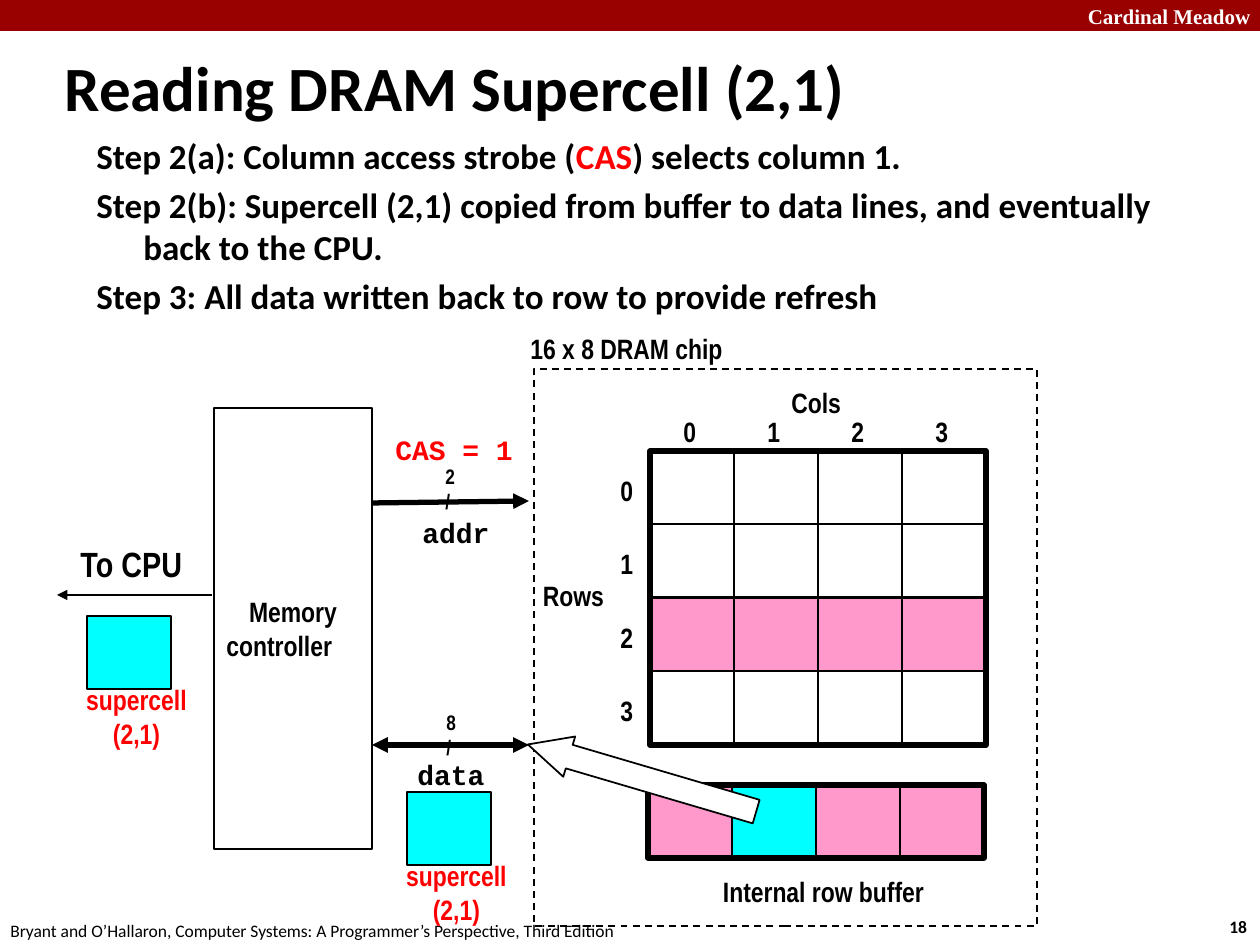
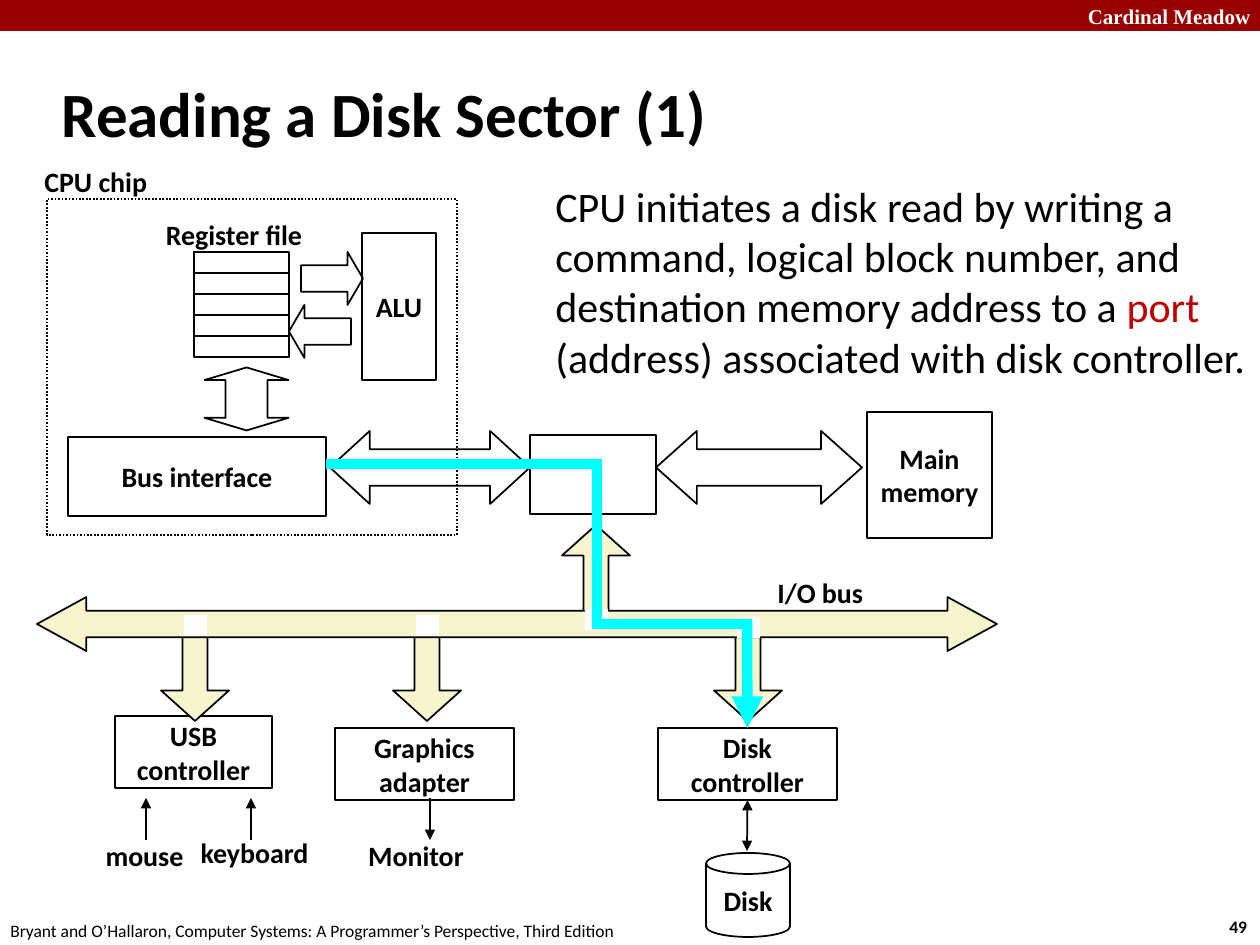
import pptx
import pptx.dml.color
import pptx.enum.dml
import pptx.enum.shapes
import pptx.enum.text
import pptx.oxml.ns
import pptx.util
import lxml.etree

RGB = pptx.dml.color.RGBColor
SHAPE = pptx.enum.shapes.MSO_SHAPE
DASH = pptx.enum.dml.MSO_LINE
ALIGN = pptx.enum.text.PP_ALIGN
ANCHOR = pptx.enum.text.MSO_ANCHOR

BLACK = RGB(0x00, 0x00, 0x00)
WHITE = RGB(0xFF, 0xFF, 0xFF)
BAND_RED = RGB(0x99, 0x00, 0x00)
RED = RGB(0xFF, 0x00, 0x00)
DARK_RED = RGB(0xC0, 0x00, 0x00)
PINK = RGB(0xFF, 0x99, 0xCC)
CYAN = RGB(0x00, 0xFF, 0xFF)
CREAM = RGB(0xF7, 0xF5, 0xCD)

PX_PER_INCH = 126


def font_format(name, size, bold=True):
    return {"name": name, "size": pptx.util.Pt(size), "bold": bold}


TITLE_FONT = font_format("Calibri", 36)
BODY_FONT = font_format("Calibri", 20)
DESCRIPTION_FONT = font_format("Calibri", 24, False)
DIAGRAM_FONT = font_format("Calibri", 16)
FOOTER_FONT = font_format("Calibri", 10, False)
NUMBER_FONT = font_format("Calibri", 10)
BAND_FONT = font_format("Times New Roman", 12)
NARROW_FONT = font_format("Arial Narrow", 16)
BUS_WIDTH_FONT = font_format("Arial Narrow", 12)
TO_CPU_FONT = font_format("Arial Narrow", 20)
CODE_FONT = font_format("Courier New", 16)

# Shared by both slides
SCHOOL = "Cardinal Meadow"
FOOTER = "Bryant and O’Hallaron, Computer Systems: A Programmer’s Perspective, Third Edition"

# DRAM slide
STEPS = [
    [("Step 2(a): Column access strobe (", BLACK), ("CAS", RED), (") selects column 1.", BLACK)],
    [("Step 2(b): Supercell (2,1) copied from buffer to data lines, and eventually back to the CPU.", BLACK)],
    [("Step 3: All data written back to row to provide refresh", BLACK)],
]
GRID_SIZE = 4
SELECTED_ROW, SELECTED_COLUMN = 2, 1
CELL_WIDTH, CELL_HEIGHT = 84, 73
GRID = (650, 451, 336, 294)
ROW_BUFFER = (648, 785, 336, 73)
DRAM_CHIP = (534, 369, 503, 557)
MEMORY_CONTROLLER = (214, 408, 158, 441)
COPY_ARROW = (621, 659, 42, 238)
SUPERCELLS = [(407, 792), (87, 616)]
DRAM_LABELS = [
    # text, box, font, colour, alignment
    ("Cols", (779, 379, 76, 47), NARROW_FONT, BLACK, ALIGN.LEFT),
    ("Rows", (530, 572, 87, 47), NARROW_FONT, BLACK, ALIGN.CENTER),
    ("Internal row buffer", (709, 868, 229, 47), NARROW_FONT, BLACK, ALIGN.CENTER),
    ("16 x 8 DRAM chip", (518, 325, 261, 47), NARROW_FONT, BLACK, ALIGN.LEFT),
    ("CAS = 1", (383, 426, 144, 47), CODE_FONT, RED, ALIGN.LEFT),
    ("addr", (410, 509, 93, 47), CODE_FONT, BLACK, ALIGN.LEFT),
    ("data", (405, 751, 93, 47), CODE_FONT, BLACK, ALIGN.LEFT),
    ("2\n/", (433, 457, 37, 63), BUS_WIDTH_FONT, BLACK, ALIGN.LEFT),
    ("8\n/", (434, 703, 37, 63), BUS_WIDTH_FONT, BLACK, ALIGN.LEFT),
    ("To CPU", (68, 536, 127, 55), TO_CPU_FONT, BLACK, ALIGN.LEFT),
]
DRAM_LINES = [
    # start, end, width, arrowheads
    ((372, 503), (529, 501), 3, ["tailEnd"]),
    ((372, 745), (529, 745), 3, ["headEnd", "tailEnd"]),
    ((212, 595), (57, 595), 1.5, ["tailEnd"]),
]

# Disk slide
DESCRIPTION = [[
    ("CPU initiates a disk read by writing a command, logical block number, "
     "and destination memory address to a ", BLACK),
    ("port ", DARK_RED),
    ("(address) associated with disk controller.", BLACK),
]]
REGISTERS = 5
REGISTER_FILE = (194, 252, 95, 21)
CPU_CHIP = (47, 199, 410, 336)
DISK_CONTROLLER = "Disk\ncontroller"
DISK_BOXES = [
    # text, box
    ("Main\nmemory", (867, 412, 125, 126)),
    ("", (530, 435, 126, 79)),
    ("ALU", (362, 233, 74, 147)),
    ("Bus interface", (68, 437, 258, 79)),
    ("USB\ncontroller", (115, 716, 157, 72)),
    ("Graphics\nadapter", (335, 728, 179, 72)),
    (DISK_CONTROLLER, (658, 728, 179, 72)),
]
IO_ARROW_ADJUSTMENTS = (0.367, 0.449)
BLOCK_ARROWS = [
    # preset, box, adjustments, fill, rotation
    (SHAPE.LEFT_RIGHT_ARROW, (656, 431, 206, 73), (0.5, 0.56), None, 0),
    (SHAPE.LEFT_RIGHT_ARROW, (330, 431, 200, 73), (0.5, 0.545), None, 0),
    (SHAPE.RIGHT_ARROW, (301, 252, 62, 53), (0.5, 0.292), None, 0),
    (SHAPE.LEFT_ARROW, (289, 305, 62, 53), (0.5, 0.292), None, 0),
    (SHAPE.LEFT_RIGHT_ARROW, (215, 357, 63, 84), (0.5, 0.2), None, 90),
    (SHAPE.UP_ARROW, (562, 525, 68, 95), IO_ARROW_ADJUSTMENTS, CREAM, 0),
    (SHAPE.DOWN_ARROW, (714, 626, 68, 95), IO_ARROW_ADJUSTMENTS, CREAM, 0),
    (SHAPE.DOWN_ARROW, (393, 626, 68, 95), IO_ARROW_ADJUSTMENTS, CREAM, 0),
    (SHAPE.DOWN_ARROW, (161, 626, 68, 95), IO_ARROW_ADJUSTMENTS, CREAM, 0),
    (SHAPE.LEFT_RIGHT_ARROW, (37, 597, 960, 54), (0.486, 0.915), CREAM, 0),
]
BUS_JOINTS = [(184, 615), (416, 615), (737, 617), (585, 609)]
DISK_LABELS = [
    ("CPU chip", (32, 158, 130, 47), ALIGN.LEFT),
    ("Register file", (152, 211, 164, 47), ALIGN.CENTER),
    ("I/O bus", (765, 569, 112, 47), ALIGN.LEFT),
    ("mouse", (92, 832, 105, 47), ALIGN.CENTER),
    ("keyboard", (187, 829, 135, 47), ALIGN.CENTER),
    ("Monitor", (355, 832, 122, 47), ALIGN.CENTER),
]
DEVICE_LINES = [
    ((146, 798), (146, 840), ["headEnd"]),
    ((251, 798), (251, 840), ["headEnd"]),
    ((430, 798), (430, 840), ["tailEnd"]),
]
READ_ROUTE = [
    ((326, 464), (602, 464)),
    ((597, 464), (597, 620)),
    ((592, 624), (747, 624)),
]


def px(length):
    return pptx.util.Emu(round(length * pptx.util.Inches(1) / PX_PER_INCH))


def set_attributes(target, values):
    for name, value in values.items():
        setattr(target, name, value)


def write_runs(frame, paragraphs, font, alignment=ALIGN.LEFT):
    """Fill a text frame from paragraphs, each a list of (text, colour)."""
    for index, runs in enumerate(paragraphs):
        paragraph = frame.paragraphs[0] if index == 0 else frame.add_paragraph()
        paragraph.alignment = alignment
        for text, color in runs:
            run = paragraph.add_run()
            run.text = text
            set_attributes(run.font, font)
            run.font.color.rgb = color


def plain(text, color=BLACK):
    return [[(line, color)] for line in text.split("\n")]


def add_text(slide, box, paragraphs, font, alignment=ALIGN.LEFT, wrap=False, anchor=ANCHOR.MIDDLE):
    frame = slide.shapes.add_textbox(*map(px, box)).text_frame
    set_attributes(frame, {"word_wrap": wrap, "vertical_anchor": anchor})
    write_runs(frame, paragraphs, font, alignment)
    return frame


def add_block(slide, box, fill=None, preset=SHAPE.RECTANGLE, line=1, dash=None, adjustments=(),
              rotation=0, text="", font=DIAGRAM_FONT):
    shape = slide.shapes.add_shape(preset, *map(px, box))
    shape.shadow.inherit = False
    shape.rotation = rotation
    if fill is None:
        shape.fill.background()
    else:
        shape.fill.solid()
        shape.fill.fore_color.rgb = fill
    if line:
        shape.line.color.rgb = BLACK
        shape.line.width = pptx.util.Pt(line)
        shape.line.dash_style = dash
    else:
        shape.line.fill.background()
    for index, value in enumerate(adjustments):
        shape.adjustments[index] = value
    if text:
        set_attributes(shape.text_frame, {"word_wrap": False, "vertical_anchor": ANCHOR.MIDDLE})
        write_runs(shape.text_frame, plain(text), font, ALIGN.CENTER)
    return shape


def add_line(slide, start, end, width=1, heads=(), color=BLACK):
    connector = slide.shapes.add_connector(
        pptx.enum.shapes.MSO_CONNECTOR.STRAIGHT, *map(px, start + end))
    connector.line.color.rgb = color
    connector.line.width = pptx.util.Pt(width)
    qualified = pptx.oxml.ns.qn
    for head in heads:
        lxml.etree.SubElement(connector.line._get_or_add_ln(), qualified("a:" + head), type="triangle")
    lxml.etree.SubElement(connector._element.spPr, qualified("a:effectLst"))
    return connector


def add_titled_slide(presentation, title, left, top, number):
    slide = presentation.slides.add_slide(presentation.slide_layouts[5])
    shape = slide.shapes.title
    set_attributes(shape, dict(zip(("left", "top", "width", "height"),
                                   map(px, (left, top, 1046, 105)))))
    set_attributes(shape.text_frame, {"vertical_anchor": ANCHOR.MIDDLE,
                                      "auto_size": pptx.enum.text.MSO_AUTO_SIZE.NONE})
    write_runs(shape.text_frame, plain(title), TITLE_FONT)
    add_block(slide, (0, 0, 1260, 31), BAND_RED, line=0)
    add_text(slide, (1023, -3, 240, 38), plain(SCHOOL, WHITE), BAND_FONT, ALIGN.RIGHT)
    add_text(slide, (1217, 910, 47, 34), plain(number), NUMBER_FONT)
    add_text(slide, (-2, 913, 640, 34), plain(FOOTER), FOOTER_FONT)
    return slide


def build_dram_slide(presentation):
    slide = add_titled_slide(presentation, "Reading DRAM Supercell (2,1)", 52, 34, "18")
    body = add_text(slide, (84, 128, 1115, 197), STEPS, BODY_FONT, wrap=True, anchor=ANCHOR.TOP)
    for paragraph in body.paragraphs:
        paragraph.space_before = pptx.util.Pt(4)
        properties = paragraph._p.get_or_add_pPr()
        properties.set("marL", str(px(47)))
        properties.set("indent", str(px(-47)))

    left, top, _, height = GRID
    for row in range(GRID_SIZE):
        offset = row * height // GRID_SIZE
        for column in range(GRID_SIZE):
            add_block(slide, (left + column * CELL_WIDTH, top + offset, CELL_WIDTH, CELL_HEIGHT),
                      PINK if row == SELECTED_ROW else WHITE)
        add_text(slide, (left + 21 + row * CELL_WIDTH, 408, 40, 47), plain(str(row)), NARROW_FONT)
        add_text(slide, (608, top + 16 + offset, 40, 47), plain(str(row)), NARROW_FONT)
    add_block(slide, GRID, line=3)
    add_block(slide, DRAM_CHIP, dash=DASH.DASH)

    controller = add_block(slide, MEMORY_CONTROLLER, WHITE, text="Memory\ncontroller", font=NARROW_FONT)
    controller.text_frame.paragraphs[1].alignment = ALIGN.LEFT

    left, top, _, height = ROW_BUFFER
    for column in range(GRID_SIZE):
        add_block(slide, (left + column * CELL_WIDTH, top, CELL_WIDTH, height),
                  CYAN if column == SELECTED_COLUMN else PINK)
    add_block(slide, ROW_BUFFER, line=3)
    add_block(slide, COPY_ARROW, WHITE, SHAPE.DOWN_ARROW, adjustments=(0.583, 1.027), rotation=106.4)

    for left, top in SUPERCELLS:
        add_text(slide, (left - 14, top + 60, 127, 81), plain("supercell\n(2,1)", RED),
                 NARROW_FONT, ALIGN.CENTER)
        add_block(slide, (left, top, CELL_WIDTH, CELL_HEIGHT), CYAN)
    for text, box, font, color, alignment in DRAM_LABELS:
        add_text(slide, box, plain(text, color), font, alignment)
    for line in DRAM_LINES:
        add_line(slide, *line)


def build_disk_slide(presentation):
    slide = add_titled_slide(presentation, "Reading a Disk Sector (1)", 49, 60, "49")
    boxes = {text: add_block(slide, box, text=text) for text, box in DISK_BOXES}
    left, top, width, height = REGISTER_FILE
    for index in range(REGISTERS):
        add_block(slide, (left, top + index * height, width, height))
    add_block(slide, CPU_CHIP, dash=DASH.ROUND_DOT)
    add_block(slide, (706, 853, 84, 84), preset=SHAPE.CAN, adjustments=(0.25,), text="Disk")
    for preset, box, adjustments, fill, rotation in BLOCK_ARROWS:
        add_block(slide, box, fill, preset, adjustments=adjustments, rotation=rotation)
    for left, top in BUS_JOINTS:
        add_block(slide, (left, top, 23, 21), WHITE, line=0)
    for text, box, alignment in DISK_LABELS:
        add_text(slide, box, plain(text), DIAGRAM_FONT, alignment)

    for start, end, heads in DEVICE_LINES:
        add_line(slide, start, end, heads=heads)
    disk_line = add_line(slide, (747, 800), (747, 851), heads=["headEnd", "tailEnd"])
    disk_line.begin_connect(boxes[DISK_CONTROLLER], 2)
    for start, end in READ_ROUTE:
        add_line(slide, start, end, 6, color=CYAN)
    last_leg = add_line(slide, (747, 619), (747, 728), 6, ["tailEnd"], CYAN)
    last_leg.end_connect(boxes[DISK_CONTROLLER], 0)
    add_text(slide, (543, 174, 733, 217), DESCRIPTION, DESCRIPTION_FONT, wrap=True, anchor=ANCHOR.TOP)


def main():
    presentation = pptx.Presentation()
    presentation.slide_width = pptx.util.Inches(10)
    presentation.slide_height = pptx.util.Inches(7.5)
    build_dram_slide(presentation)
    build_disk_slide(presentation)
    presentation.save("out.pptx")


if __name__ == "__main__":
    main()
